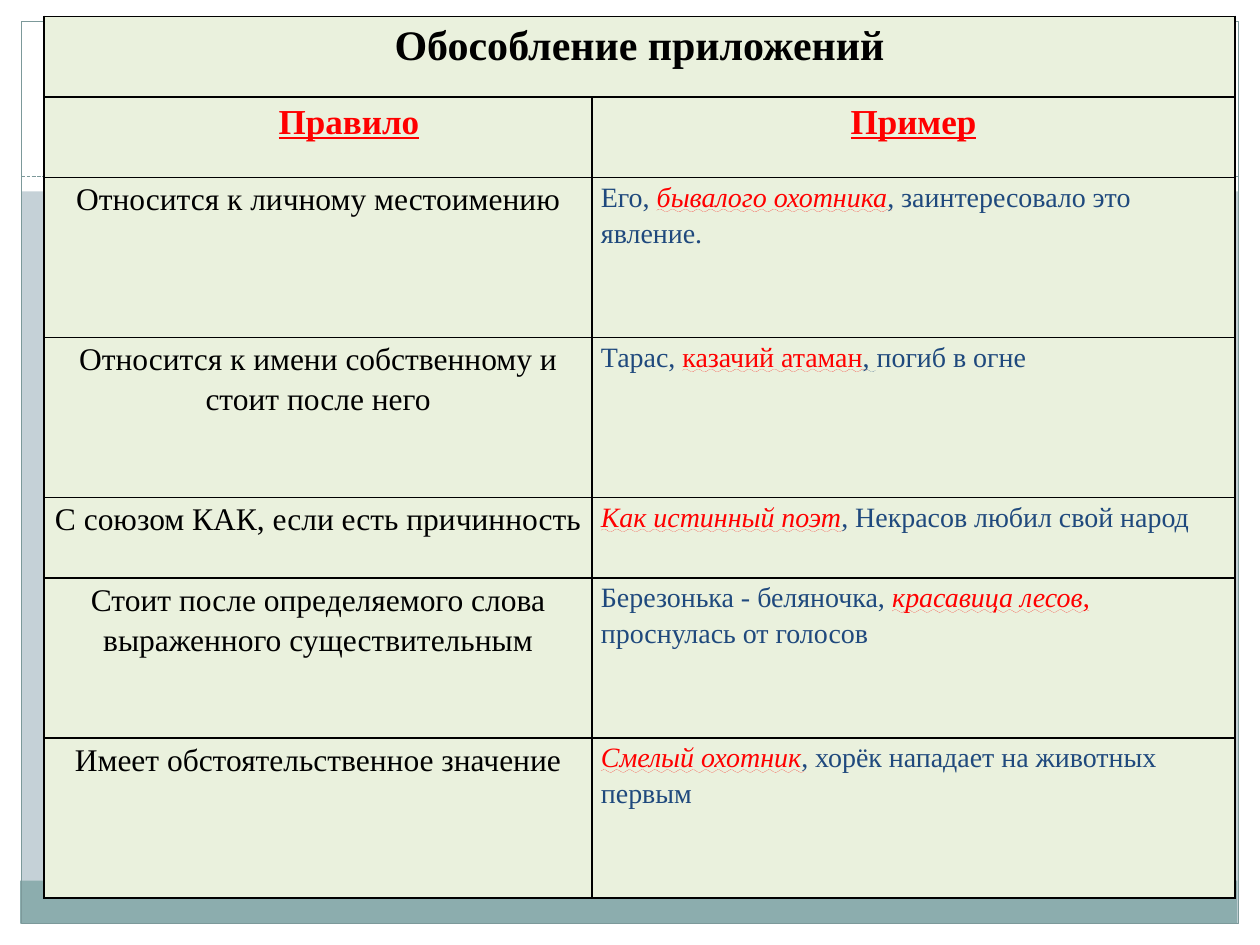
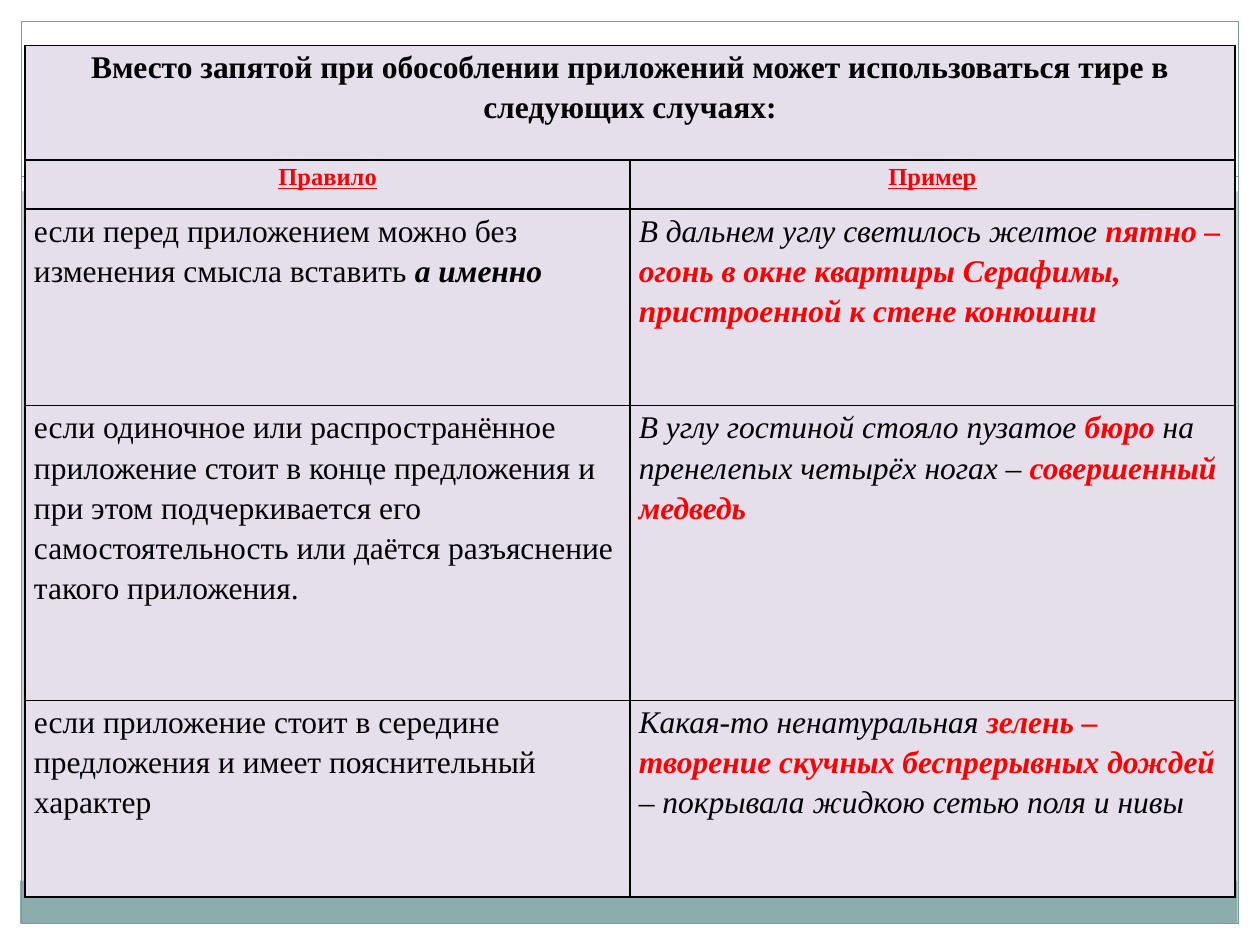
from dataclasses import dataclass

from lxml.etree import SubElement
from pptx import Presentation
from pptx.dml.color import RGBColor as Color
from pptx.enum.dml import MSO_LINE as Dash
from pptx.enum.shapes import MSO_CONNECTOR as Connector, MSO_SHAPE as Shape
from pptx.enum.text import MSO_UNDERLINE as Underline, PP_ALIGN as Align
from pptx.oxml.ns import qn
from pptx.util import Pt

EMU_PER_PX = 9144


@dataclass(frozen=True)
class Theme:
    """Colours, font and type sizes of the deck."""
    font: str = "Times New Roman"
    spacing: float = 1.15
    backdrop: str = "C5D1D7"
    white: str = "FFFFFF"
    band: str = "8CADAE"
    rule: str = "7C999A"
    black: str = "000000"
    red: str = "FF0000"
    navy: str = "1F497D"
    green_tint: str = "EAF1DD"
    lilac_tint: str = "E5DFEC"
    banner: int = 24
    heading: int = 20
    body: int = 18
    example: int = 16
    small_heading: int = 14


THEME = Theme()


def px(length):
    """Turn px into EMU."""
    return length * EMU_PER_PX


def style(color, size, **formats):
    """Describe the look of a span."""
    return color, dict(size=Pt(size), name=THEME.font, **formats)


def heading(size):
    """Describe the look of a column heading."""
    return style(THEME.red, size, bold=True, underline=True)


PLAIN = style(THEME.black, THEME.body)
STRONG = style(THEME.black, THEME.body, bold=True)
STRONG_ITALIC = style(THEME.black, THEME.body, bold=True, italic=True)
ITALIC = style(THEME.black, THEME.body, italic=True)
RED_ITALIC = style(THEME.red, THEME.body, bold=True, italic=True)
BANNER = style(THEME.black, THEME.banner, bold=True)
NAVY = style(THEME.navy, THEME.example)
NAVY_WAVE = style(THEME.navy, THEME.example, underline=Underline.WAVY_LINE)
RED = style(THEME.red, THEME.example)
RED_WAVE = style(THEME.red, THEME.example, underline=Underline.WAVY_LINE)
RED_ITALIC_WAVE = style(THEME.red, THEME.example, italic=True,
                        underline=Underline.WAVY_LINE)


class Painter:
    """Draws styled elements on the current slide."""

    def __init__(self, theme):
        """Start a deck with the shared background."""
        self.theme = theme
        self.deck = Presentation()
        self.deck.slide_width, self.deck.slide_height = px(1000), px(750)
        fill = self.deck.slide_master.background.fill
        fill.solid()
        fill.fore_color.rgb = Color.from_string(theme.backdrop)
        self.page = None

    def new_page(self):
        """Add a slide with its white margins, bottom band and frame."""
        self.page = self.deck.slides.add_slide(self.deck.slide_layouts[6])
        white = self.theme.white
        for place in ((0, 733, 1000, 17), (0, 0, 1000, 152),
                      (0, 0, 17, 750), (983, 0, 17, 750)):
            self.rectangle(place, fill=white)
        self.rectangle((16, 699, 966, 34), fill=self.theme.band)
        self.rectangle((17, 17, 966, 716), line=self.theme.rule)
        self.dashed_line(17, 983, 140)

    def rectangle(self, place, fill=None, line=None):
        """Draw a rectangle with an optional fill and outline."""
        box = self.page.shapes.add_shape(Shape.RECTANGLE, *map(px, place))
        box.shadow.inherit = False
        for part, color in ((box.fill, fill), (box.line.fill, line)):
            if color:
                part.solid()
                part.fore_color.rgb = Color.from_string(color)
            else:
                part.background()
        if line:
            box.line.width = Pt(0.75)

    def dashed_line(self, left, right, top):
        """Draw a horizontal dashed line."""
        link = self.page.shapes.add_connector(
            Connector.STRAIGHT, px(left), px(top), px(right), px(top))
        link.line.color.rgb = Color.from_string(self.theme.rule)
        link.line.width = Pt(0.75)
        link.line.dash_style = Dash.SQUARE_DOT
        SubElement(link._element.spPr, qn("a:effectLst"))

    def table(self, place, columns, heights, tint):
        """Add a bordered, tinted table whose first row is one cell."""
        left, top = place
        grid = self.page.shapes.add_table(
            len(heights), len(columns), px(left), px(top),
            px(sum(columns)), px(sum(heights))).table
        grid.first_row = grid.horz_banding = False
        for column, width in zip(grid.columns, columns):
            column.width = px(width)
        for row, height in zip(grid.rows, heights):
            row.height = px(height)
        for cell in grid.iter_cells():
            self.cell_look(cell, tint)
        grid.cell(0, 0).merge(grid.cell(0, len(columns) - 1))
        return grid

    def cell_look(self, cell, tint):
        """Set the borders, margins and fill of a cell."""
        props = cell._tc.get_or_add_tcPr()
        for side in ("lnL", "lnR", "lnT", "lnB"):
            border = SubElement(props, qn(f"a:{side}"), w=str(Pt(1)))
            paint = SubElement(border, qn("a:solidFill"))
            SubElement(paint, qn("a:srgbClr"), val=self.theme.black)
        margins = dict(margin_left=px(7), margin_right=px(7),
                       margin_top=0, margin_bottom=0)
        for name, value in margins.items():
            setattr(cell, name, value)
        cell.fill.solid()
        cell.fill.fore_color.rgb = Color.from_string(tint)

    def cell_text(self, cell, spans, align=Align.LEFT):
        """Fill a cell with styled spans."""
        para = cell.text_frame.paragraphs[0]
        para.alignment, para.line_spacing = align, self.theme.spacing
        for (color, formats), text in spans:
            span = para.add_run()
            span.text = text
            for name, value in formats.items():
                setattr(span.font, name, value)
            span.font.color.rgb = Color.from_string(color)

    def rules_table(self, grid, title, heading_style, rows, rule_align):
        """Fill in the title, column headings and rule rows."""
        self.cell_text(grid.cell(0, 0), [title], Align.CENTER)
        for column, text in enumerate(("Правило", "Пример")):
            self.cell_text(grid.cell(1, column), [(heading_style, text)],
                           Align.CENTER)
        for index, (rule, example) in enumerate(rows, start=2):
            self.cell_text(grid.cell(index, 0), rule, rule_align)
            self.cell_text(grid.cell(index, 1), example)


ISOLATION_RULES = [
    ([(PLAIN, "Относится к личному местоимению")],
     [(NAVY, "Его, "), (RED_ITALIC_WAVE, "бывалого охотника"),
      (NAVY, ", заинтересовало это явление.")]),
    ([(PLAIN, "Относится к имени собственному и стоит после него")],
     [(NAVY, "Тарас, "), (RED_WAVE, "казачий атаман"), (NAVY_WAVE, ","),
      (NAVY, " погиб в огне")]),
    ([(PLAIN, "С союзом КАК, если есть причинность")],
     [(RED_ITALIC_WAVE, "Как истинный поэт"),
      (NAVY, ", Некрасов любил свой народ")]),
    ([(PLAIN, "Стоит после определяемого слова выраженного существительным")],
     [(NAVY, "Березонька - беляночка, "), (RED_ITALIC_WAVE, "красавица лесов"),
      (RED, ","), (NAVY, " проснулась от голосов")]),
    ([(PLAIN, "Имеет обстоятельственное значение")],
     [(RED_ITALIC_WAVE, "Смелый охотник"),
      (NAVY, ", хорёк нападает на животных первым")]),
]

DASH_RULES = [
    ([(PLAIN, "если перед приложением можно без изменения смысла вставить "),
      (STRONG_ITALIC, "а именно")],
     [(ITALIC, "В дальнем углу светилось желтое "),
      (RED_ITALIC, "пятно – огонь в окне квартиры Серафимы, пристроенной "
                   "к стене конюшни")]),
    ([(PLAIN, "если одиночное или распространённое приложение стоит в конце "
              "предложения и при этом подчеркивается его самостоятельность "
              "или даётся разъяснение такого приложения.")],
     [(ITALIC, "В углу гостиной стояло пузатое "), (RED_ITALIC, "бюро "),
      (ITALIC, "на пренелепых четырёх ногах – "),
      (RED_ITALIC, "совершенный медведь")]),
    ([(PLAIN, "если приложение стоит в середине предложения и имеет "
              "пояснительный характер")],
     [(ITALIC, "Какая-то ненатуральная "),
      (RED_ITALIC, "зелень – творение скучных беспрерывных дождей "),
      (ITALIC, "– покрывала жидкою сетью поля и нивы")]),
]


def isolation_page(painter):
    """Build the slide on isolating appositions."""
    painter.new_page()
    short, tall = 64, 127
    grid = painter.table((35, 13), (435, 510),
                         (short, short, tall, tall, short, tall, tall),
                         THEME.green_tint)
    painter.rules_table(grid, (BANNER, "Обособление приложений"),
                        heading(THEME.heading), ISOLATION_RULES, Align.CENTER)
    props = grid.cell(1, 0).text_frame.paragraphs[0]._p.get_or_add_pPr()
    for name, value in dict(marL=px(69), indent=px(-20)).items():
        props.set(name, str(value))


def dash_page(painter):
    """Build the slide on the dash in place of a comma."""
    painter.new_page()
    grid = painter.table((20, 36), (480, 480), (91, 39, 156, 234, 156),
                         THEME.lilac_tint)
    title = ("Вместо запятой при обособлении приложений может использоваться "
             "тире в следующих случаях:")
    painter.rules_table(grid, (STRONG, title), heading(THEME.small_heading),
                        DASH_RULES, Align.LEFT)


def main():
    """Build and save the deck."""
    painter = Painter(THEME)
    isolation_page(painter)
    dash_page(painter)
    painter.deck.save("out.pptx")


if __name__ == "__main__":
    main()
